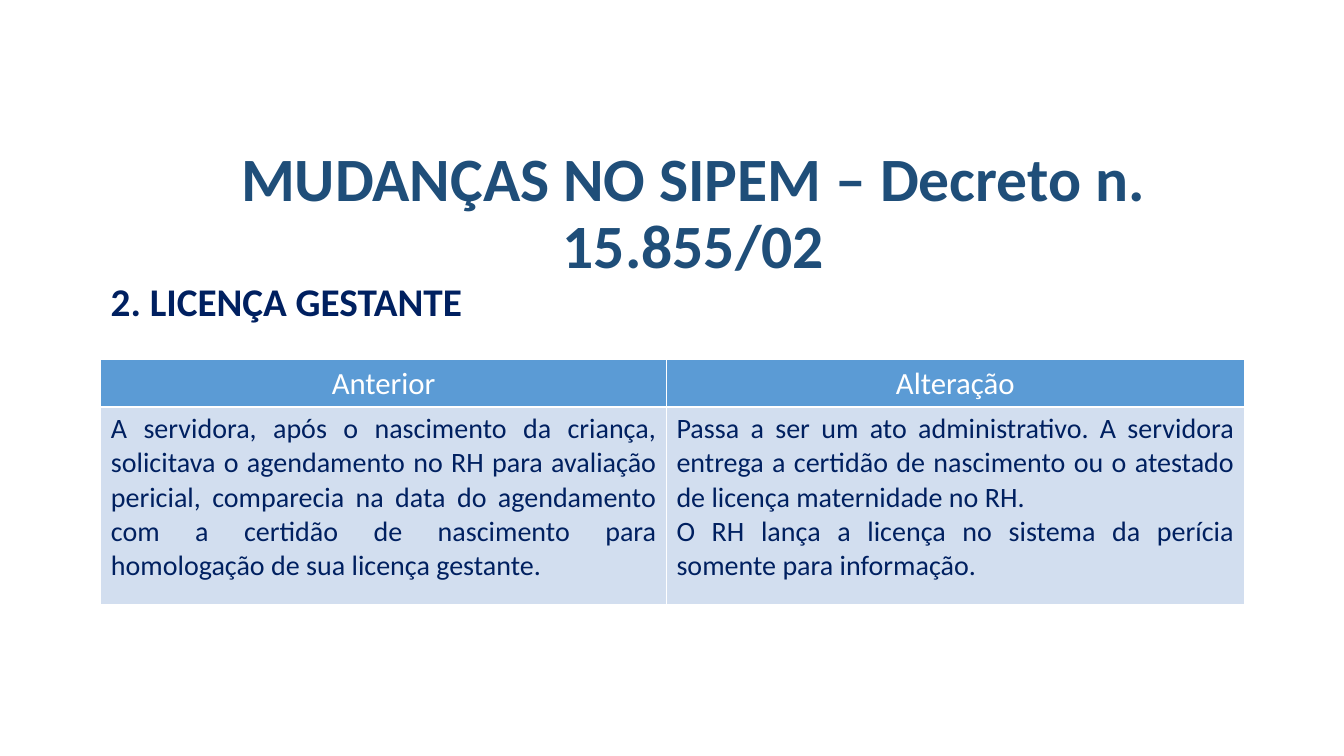
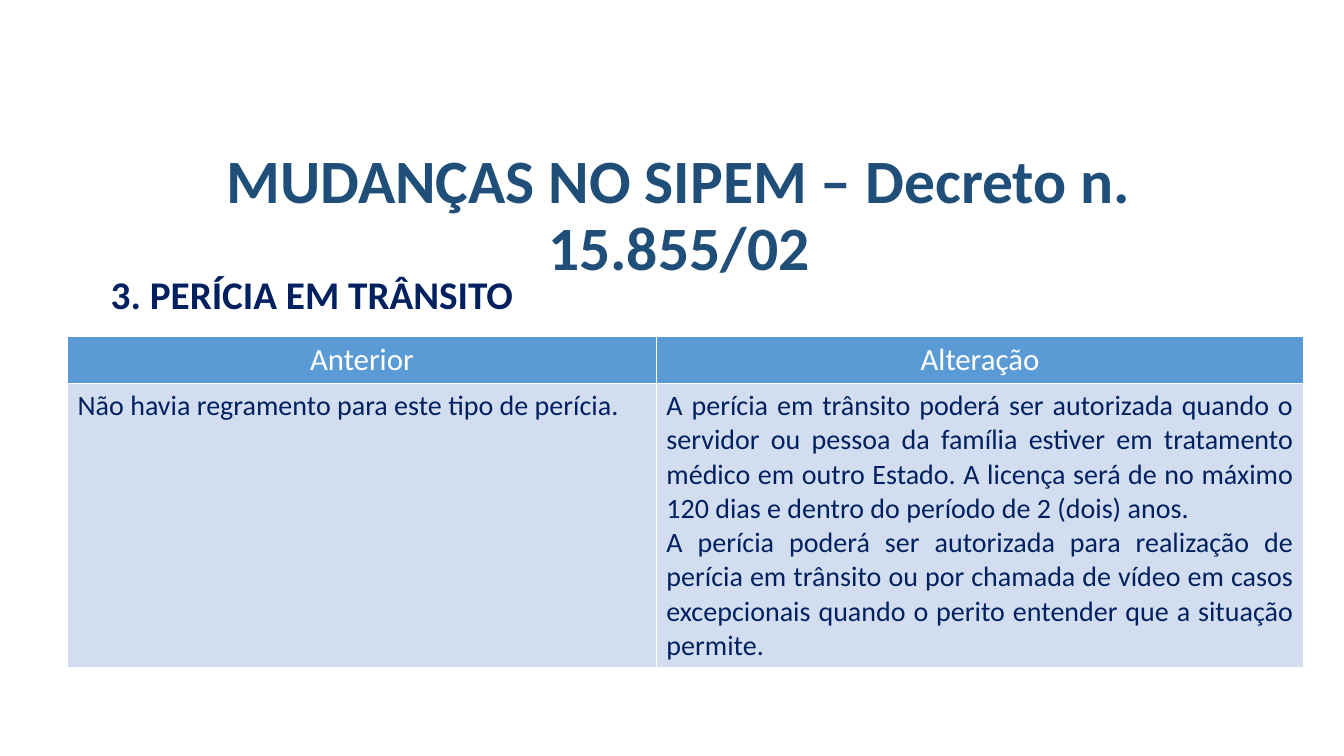
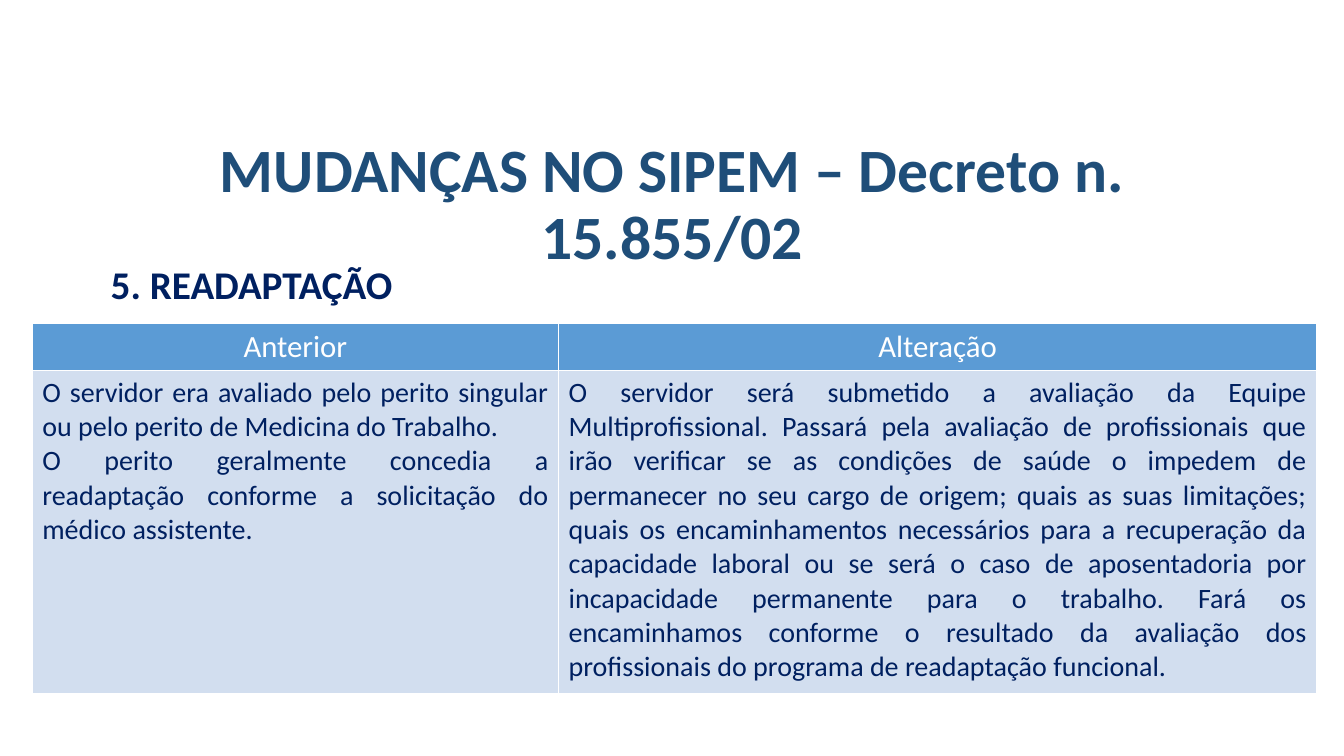
from lxml import etree
from pptx import Presentation
from pptx.dml.color import RGBColor
from pptx.enum.text import MSO_ANCHOR, PP_ALIGN
from pptx.oxml.ns import qn
from pptx.util import Inches, Pt

LEFT, CENTER, JUSTIFY = PP_ALIGN.LEFT, PP_ALIGN.CENTER, PP_ALIGN.JUSTIFY
TOP, MIDDLE = MSO_ANCHOR.TOP, MSO_ANCHOR.MIDDLE

FONT = "Calibri"
WHITE = "FFFFFF"
TITLE_BLUE = "1F4E79"
NAVY = "002060"
HEADER_BLUE = "5B9BD5"
BODY_BLUE = "D2DEEF"

TITLE = "MUDANÇAS NO SIPEM – Decreto n. 15.855/02"
HEADERS = ("Anterior", "Alteração")
HEADER_HEIGHT = 0.46

TOPICS = [
    {
        "title_box": (1, 1.73, 11.76, 0.81),
        "heading": "2. LICENÇA GESTANTE",
        "heading_box": (1, 2.75, 11.33, 0.6),
        "table_origin": (1, 3.57),
        "column_widths": (5.61, 5.73),
        "body_height": 1.96,
        "body": (
            "A servidora, após o nascimento da criança, solicitava o agendamento no RH para "
            "avaliação pericial, comparecia na data do agendamento com a certidão de nascimento "
            "para homologação de sua licença gestante.",
            "Passa a ser um ato administrativo. A servidora entrega a certidão de nascimento ou "
            "o atestado de licença maternidade no RH.\n"
            "O RH lança a licença no sistema da perícia somente para informação.",
        ),
    },
    {
        "title_box": (1, 1.77, 11.47, 0.77),
        "heading": "3. PERÍCIA EM TRÂNSITO",
        "heading_box": (1, 2.69, 11.1, 0.6),
        "table_origin": (0.67, 3.34),
        "column_widths": (5.84, 6.42),
        "body_height": 2.82,
        "body": (
            "Não havia regramento para este tipo de perícia.",
            "A perícia em trânsito poderá ser autorizada quando o servidor ou pessoa da família "
            "estiver em tratamento médico em outro Estado. A licença será de no máximo 120 dias "
            "e dentro do período de 2 (dois) anos.\n"
            "A perícia poderá ser autorizada para realização de perícia em trânsito ou por "
            "chamada de vídeo em casos excepcionais quando o perito entender que a situação "
            "permite.",
        ),
    },
    {
        "title_box": (0.92, 1.72, 11.5, 0.65),
        "heading": "5. READAPTAÇÃO",
        "heading_box": (1, 2.59, 11.33, 0.6),
        "table_origin": (0.32, 3.21),
        "column_widths": (5.22, 7.52),
        "body_height": 3.2,
        "body": (
            "O servidor era avaliado pelo perito singular ou pelo perito de Medicina do "
            "Trabalho.\n"
            "O perito geralmente concedia a readaptação conforme a solicitação do médico "
            "assistente.",
            "O servidor será submetido a avaliação da Equipe Multiprofissional. Passará pela "
            "avaliação de profissionais que irão verificar se as condições de saúde o impedem "
            "de permanecer no seu cargo de origem; quais as suas limitações; quais os "
            "encaminhamentos necessários para a recuperação da capacidade laboral ou se será o "
            "caso de aposentadoria por incapacidade permanente para o trabalho. Fará os "
            "encaminhamos conforme o resultado da avaliação dos profissionais do programa de "
            "readaptação funcional.",
        ),
    },
]


def color(hex_value):
    return RGBColor.from_string(hex_value)


def write_text(text_frame, text, size, hex_value, alignment, bold=False, line_spacing=None):
    text_frame.word_wrap = True
    text_frame.text = text
    for paragraph in text_frame.paragraphs:
        paragraph.alignment = alignment
        paragraph.line_spacing = line_spacing
        paragraph.font.name = FONT
        paragraph.font.size = Pt(size)
        paragraph.font.bold = bold
        paragraph.font.color.rgb = color(hex_value)


presentation = Presentation()
presentation.slide_width = Inches(13.33)
presentation.slide_height = Inches(7.5)
blank_layout = presentation.slide_layouts[6]

for topic in TOPICS:
    slide = presentation.slides.add_slide(blank_layout)

    title = slide.shapes.add_textbox(*map(Inches, topic["title_box"]))
    title.text_frame.vertical_anchor = MIDDLE
    write_text(title.text_frame, TITLE, 44, TITLE_BLUE, CENTER, bold=True, line_spacing=0.9)

    heading = slide.shapes.add_textbox(*map(Inches, topic["heading_box"]))
    write_text(heading.text_frame, topic["heading"], 28, NAVY, LEFT, bold=True, line_spacing=0.9)

    left, top = topic["table_origin"]
    widths = topic["column_widths"]
    heights = (HEADER_HEIGHT, topic["body_height"])
    table = slide.shapes.add_table(
        2, 2, Inches(left), Inches(top), Inches(sum(widths)), Inches(sum(heights))
    ).table
    for column, width in zip(table.columns, widths):
        column.width = Inches(width)
    for row, height in zip(table.rows, heights):
        row.height = Inches(height)

    row_styles = (
        (HEADERS, 22, WHITE, CENTER, MIDDLE, HEADER_BLUE),
        (topic["body"], 20, NAVY, JUSTIFY, TOP, BODY_BLUE),
    )
    for row, (texts, size, text_color, alignment, anchor, fill) in zip(table.rows, row_styles):
        for cell, text in zip(row.cells, texts):
            write_text(cell.text_frame, text, size, text_color, alignment)
            cell.vertical_anchor = anchor
            properties = cell._tc.get_or_add_tcPr()
            for side in ("a:lnL", "a:lnR", "a:lnT", "a:lnB"):
                border = etree.SubElement(properties, qn(side), w=str(Pt(1)))
                border_fill = etree.SubElement(border, qn("a:solidFill"))
                etree.SubElement(border_fill, qn("a:srgbClr"), val=WHITE)
            cell.fill.solid()
            cell.fill.fore_color.rgb = color(fill)

presentation.save("out.pptx")
